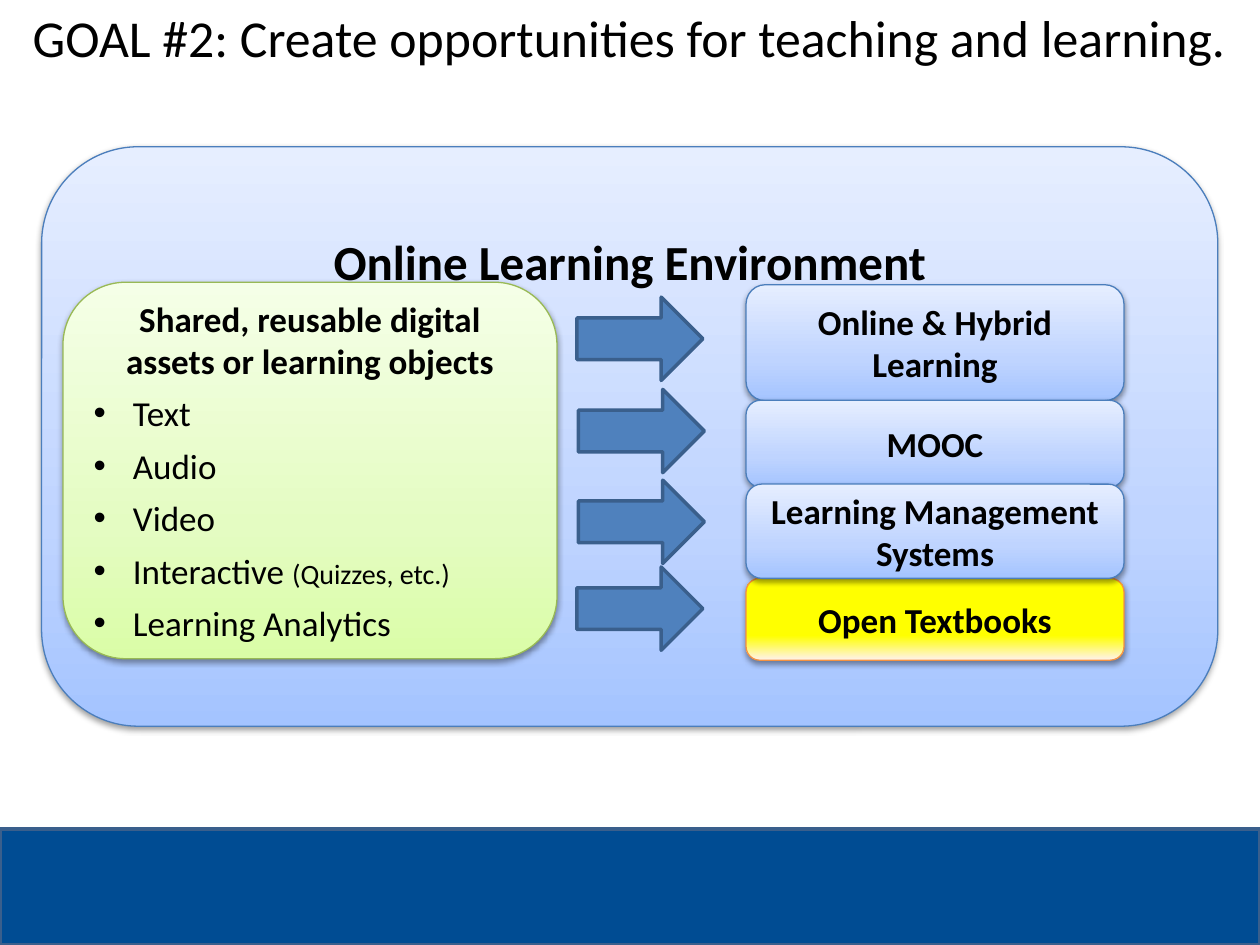
"""Build the Goal #2 slide on teaching and learning in an online environment."""
from lxml.etree import SubElement
from pptx import Presentation
from pptx.dml.color import RGBColor
from pptx.enum.shapes import MSO_SHAPE as Preset
from pptx.enum.text import MSO_ANCHOR as Anchor, PP_ALIGN as Align
from pptx.oxml import parse_xml
from pptx.oxml.ns import nsdecls, qn
from pptx.util import Cm, Pt

COLORS = {
    "text": "000000",
    "footer": "004C93",
    "arrow": "4F81BD",
    "edge": "3A5F8C",
    "blue edge": "4B7EBC",
    "green edge": "98B955",
    "orange edge": "F69240",
}
GRADIENTS = {
    "blue": [(0, "A4C4FF"), (35, "BFD4FF"), (100, "E6EEFF")],
    "green": [(0, "DAFDA7"), (35, "E4FCC2"), (100, "F5FFE7")],
    "orange": [(0, "FFF2ED"), (30, "FFFF00"), (98, "FFFF00")],
}


def add_panel(left, top, width, height, tone):
    panel = slide.shapes.add_shape(
        Preset.ROUNDED_RECTANGLE, Cm(left), Cm(top), Cm(width), Cm(height))
    panel.line.color.rgb = RGBColor.from_string(COLORS[f"{tone} edge"])
    panel.line.width = Pt(0.75)
    stops = "".join(
        f'<a:gs pos="{pos * 1000}"><a:srgbClr val="{color}"/></a:gs>'
        for pos, color in GRADIENTS[tone])
    properties = panel._element.spPr
    properties.insert(2, parse_xml(
        f'<a:gradFill {nsdecls("a")} rotWithShape="1"><a:gsLst>{stops}</a:gsLst>'
        '<a:lin ang="16200000" scaled="0"/></a:gradFill>'))
    properties.append(parse_xml(
        f'<a:effectLst {nsdecls("a")}>'
        '<a:outerShdw blurRad="40000" dist="20000" dir="5400000" rotWithShape="0">'
        '<a:srgbClr val="000000"><a:alpha val="38000"/></a:srgbClr>'
        '</a:outerShdw></a:effectLst>'))
    panel.text_frame.word_wrap = True
    return panel.text_frame


def add_run(paragraph, text, size, bold=False):
    run = paragraph.add_run()
    run.text = text
    run.font.name = "Calibri"
    run.font.size = Pt(size)
    run.font.bold = bold
    run.font.color.rgb = RGBColor.from_string(COLORS["text"])


deck = Presentation()
deck.slide_width, deck.slide_height = Cm(25.4), Cm(19.05)
slide = deck.slides.add_slide(deck.slide_layouts[6])

title = slide.shapes.add_textbox(0, 0, Cm(25.4), Cm(2.11)).text_frame
title.word_wrap = True
title.paragraphs[0].alignment = Align.CENTER
add_run(title.paragraphs[0],
        "GOAL #2: Create opportunities for teaching and learning.", 29.6)

environment = add_panel(0.84, 2.96, 23.71, 11.68, "blue")
environment.vertical_anchor = Anchor.TOP
environment.margin_top = Cm(1.14)
environment.paragraphs[0].alignment = Align.CENTER
add_run(environment.paragraphs[0], "Online Learning Environment", 28, True)

for top, height, tone, lines in [
    (5.74, 2.34, "blue", ["Online & Hybrid Learning"]),
    (8.07, 1.75, "blue", ["MOOC"]),
    (11.66, 1.65, "orange", ["Open Textbooks"]),
    (9.76, 1.9, "blue", ["Learning Management", "Systems"]),
]:
    outlet = add_panel(15.04, top, 7.62, height, tone)
    for number, line in enumerate(lines):
        paragraph = outlet.add_paragraph() if number else outlet.paragraphs[0]
        paragraph.alignment = Align.CENTER
        add_run(paragraph, line, 20, True)

assets = add_panel(1.27, 5.69, 9.96, 7.59, "green")
heading = assets.paragraphs[0]
heading.alignment = Align.CENTER
heading.space_after = Pt(6)
add_run(heading, "Shared, reusable digital assets or learning objects", 20, True)
for asset, detail in [
    ("Text", ""),
    ("Audio", ""),
    ("Video", ""),
    ("Interactive ", "(Quizzes, etc.)"),
    ("Learning Analytics", ""),
]:
    item = assets.add_paragraph()
    item.alignment = Align.LEFT
    item.space_after = Pt(6)
    settings = item._p.get_or_add_pPr()
    settings.set("marL", str(Cm(0.79)))
    settings.set("indent", str(-Cm(0.79)))
    SubElement(settings, qn("a:buClr")).append(
        parse_xml(f'<a:srgbClr {nsdecls("a")} val="{COLORS["text"]}"/>'))
    SubElement(settings, qn("a:buFont")).set("typeface", "Arial")
    SubElement(settings, qn("a:buChar")).set("char", "•")
    add_run(item, asset, 20)
    if detail:
        add_run(item, detail, 16)

arrows = [(Preset.RIGHT_ARROW, left, top, 2.54, 1.68, "arrow") for left, top in
          [(11.63, 5.99), (11.66, 7.85), (11.66, 9.68), (11.63, 11.43)]]
footer = (Preset.RECTANGLE, 0, 16.71, 25.4, 2.34, "footer")
for preset, left, top, width, height, color in [footer, *arrows]:
    solid = slide.shapes.add_shape(preset, Cm(left), Cm(top), Cm(width), Cm(height))
    solid.shadow.inherit = False
    solid.fill.solid()
    solid.fill.fore_color.rgb = RGBColor.from_string(COLORS[color])
    solid.line.color.rgb = RGBColor.from_string(COLORS["edge"])
    solid.line.width = Pt(2)

deck.save("out.pptx")
